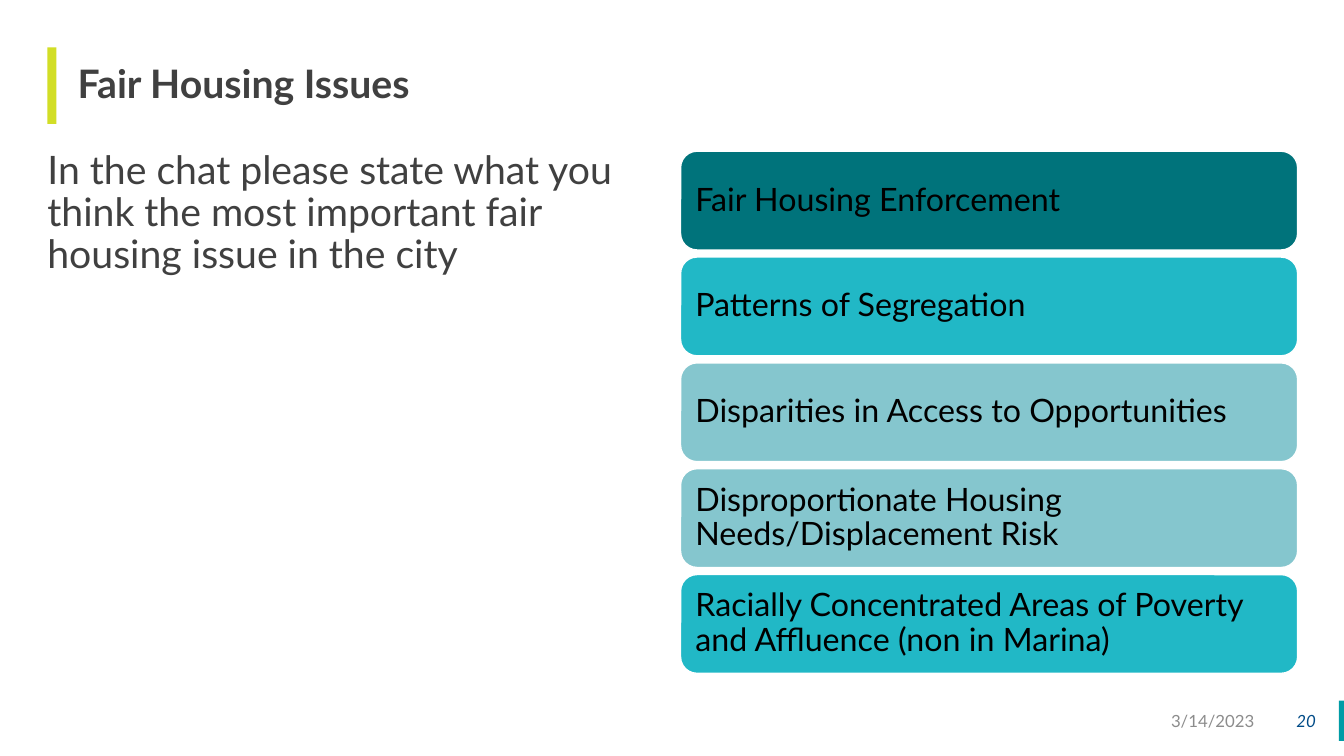
"""Build the Fair Housing Issues slide."""
import pptx
import pptx.util
import pptx.dml.color
import pptx.enum.shapes
import pptx.enum.text

WIDE, HIGH = 13.33, 7.5
TITLE = "Fair Housing Issues"
PROMPT = ("In the chat please state what you think the most important "
          "fair housing issue in the city")
DATE, PAGE = "3/14/2023", "20"
ISSUES = [
    ("Fair Housing Enforcement", "00737B"),
    ("Patterns of Segregation", "21B8C6"),
    ("Disparities in Access to Opportunities", "85C6CE"),
    ("Disproportionate Housing Needs/Displacement Risk", "85C6CE"),
    ("Racially Concentrated Areas of Poverty and Affluence (non in Marina)",
     "21B8C6"),
]
BARS = [((13.28, 6.95, 0.05, 0.4), "009CA6"), ((0.47, 0.47, 0.09, 0.76), "D2DE26")]
CARD = (6.75, 1.5, 6.12, 0.98)
STEP = 1.05
DARK = "404040"

FORM = pptx.enum.shapes.MSO_SHAPE
SIDE = pptx.enum.text.PP_ALIGN
MID = pptx.enum.text.MSO_ANCHOR.MIDDLE
TOP = pptx.enum.text.MSO_ANCHOR.TOP


def inch(box):
    return [pptx.util.Inches(n) for n in box]


def tint(code):
    return pptx.dml.color.RGBColor.from_string(code)


def block(slide, form, box, fill, edge=None):
    shape = slide.shapes.add_shape(form, *inch(box))
    shape.shadow.inherit = False
    shape.fill.solid()
    shape.fill.fore_color.rgb = tint(fill)
    if edge:
        shape.line.color.rgb = tint(edge)
        shape.line.width = pptx.util.Pt(1)
    else:
        shape.line.fill.background()
    return shape


def write(shape, text, size, ink, pad, anchor=MID, side=SIDE.LEFT,
          lead=0.9, bold=False, slant=False):
    frame = shape.text_frame
    frame.word_wrap = True
    frame.auto_size = pptx.enum.text.MSO_AUTO_SIZE.NONE
    frame.vertical_anchor = anchor
    (frame.margin_left, frame.margin_top,
     frame.margin_right, frame.margin_bottom) = inch(pad)
    para = frame.paragraphs[0]
    para.alignment, para.line_spacing = side, lead
    run = para.add_run()
    run.text = text
    font = run.font
    font.name, font.size = "Lato", pptx.util.Pt(size)
    font.bold, font.italic = bold, slant
    font.color.rgb = tint(ink)


def main():
    deck = pptx.Presentation()
    deck.slide_width, deck.slide_height = inch((WIDE, HIGH))
    slide = deck.slides.add_slide(deck.slide_layouts[5])

    for box, fill in BARS:
        block(slide, FORM.RECTANGLE, box, fill)

    head = slide.shapes.title
    head.left, head.top, head.width, head.height = inch((0.57, 0.47, 12.31, 0.76))
    write(head, TITLE, 28, DARK, (0.2, 0, 0, 0), bold=True)

    body = slide.shapes.add_textbox(*inch((0.47, 1.49, 5.98, 5.2)))
    write(body, PROMPT, 28, DARK, (0, 0, 0, 0), anchor=TOP)

    foot = [(DATE, 9.54, 3, "8C8C8C", False), (PAGE, 12.54, 0.61, "004B87", True)]
    for text, left, wide, ink, slant in foot:
        note = slide.shapes.add_textbox(*inch((left, 6.95, wide, 0.4)))
        write(note, text, 12, ink, (0.1, 0.05, 0.1, 0.05), side=SIDE.RIGHT,
              lead=1.0, slant=slant)

    left, top, wide, high = CARD
    for row, (text, fill) in enumerate(ISSUES):
        box = (left, top + row * STEP, wide, high)
        card = block(slide, FORM.ROUNDED_RECTANGLE, box, fill, "FFFFFF")
        write(card, text, 23, "000000", (0.1, 0.1, 0.1, 0.1))

    deck.save("out.pptx")


if __name__ == "__main__":
    main()
